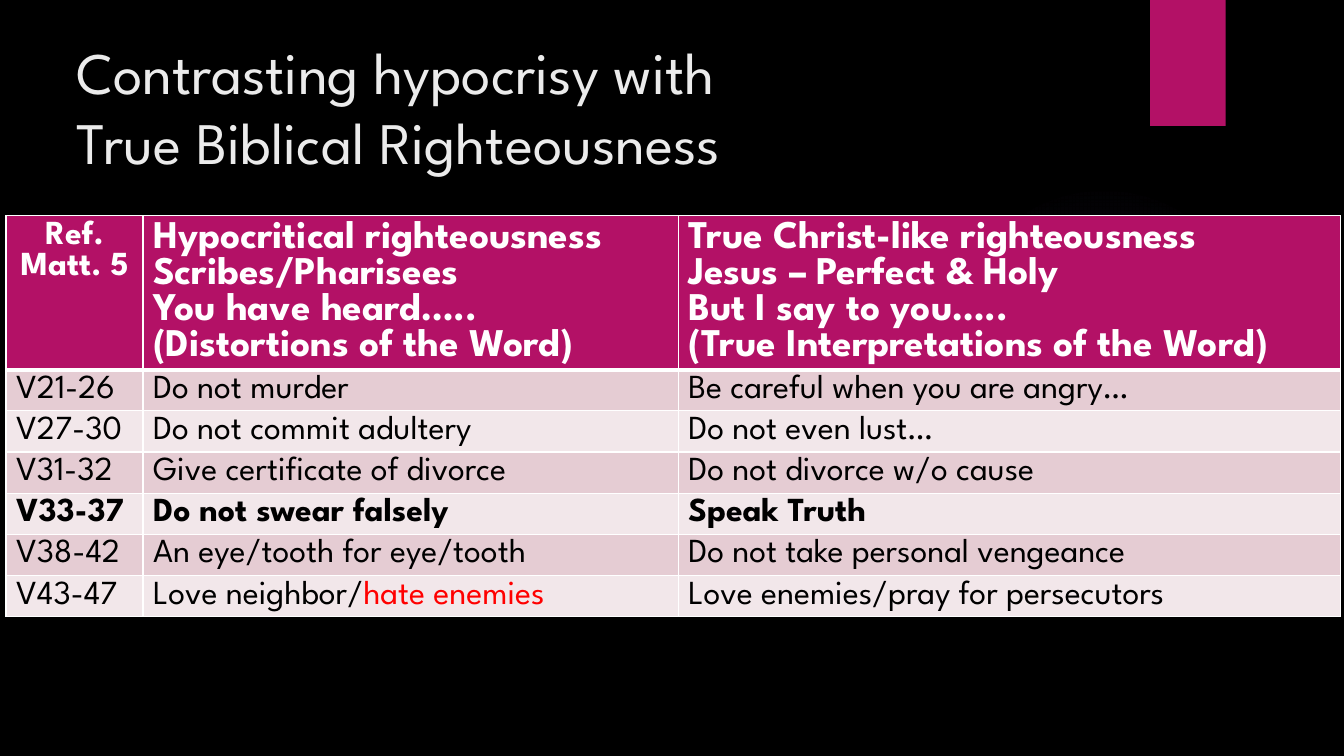
from dataclasses import dataclass

from lxml import etree
from pptx import Presentation
from pptx.dml.color import RGBColor
from pptx.enum.shapes import MSO_SHAPE
from pptx.enum.text import MSO_ANCHOR, MSO_AUTO_SIZE, PP_ALIGN
from pptx.oxml import parse_xml
from pptx.oxml.ns import qn
from pptx.shapes.autoshape import Shape
from pptx.slide import Slide
from pptx.table import _Cell
from pptx.text.text import _Run
from pptx.util import Pt

RECTANGLE, OVAL = MSO_SHAPE.RECTANGLE, MSO_SHAPE.OVAL
LEFT, CENTER = PP_ALIGN.LEFT, PP_ALIGN.CENTER
MIDDLE = MSO_ANCHOR.MIDDLE
NO_AUTOFIT = MSO_AUTO_SIZE.NONE
DRAWING_NAMESPACE = "http://schemas.openxmlformats.org/drawingml/2006/main"


@dataclass(frozen=True)
class Theme:
    font: str = "League Spartan"
    background: str = "000000"
    accent: str = "B31166"
    glow: str = "9B6BF2"
    title: str = "EBEBEB"
    light: str = "FFFFFF"
    dark: str = "000000"
    warning: str = "FF0000"
    bands: tuple[str, str] = ("E5CCD3", "F2E7EA")
    title_size: float = 42
    title_spacing: float = 50
    header_size: float = 28
    body_size: float = 24
    border: float = 1
    header_border: float = 3


@dataclass(frozen=True)
class Box:
    left: float
    top: float
    width: float
    height: float


@dataclass(frozen=True)
class Column:
    width: float
    heading: tuple[str, ...]
    heading_size: float
    heading_alignment: PP_ALIGN


@dataclass(frozen=True)
class Contrast:
    verses: str
    heard: str
    said: str
    bold: bool = False
    heard_warning: str = ""


THEME = Theme()
TITLE_BOX = Box(47.5, 20.9, 740.9, 110.2)
GLOW_BOX = Box(677.5, 131.8, 221.8, 221.8)
TAB_BOX = Box(821.5, 0, 54, 90)
TABLE_LEFT, TABLE_TOP = 4.3, 154.1
HEADER_HEIGHT, ROW_HEIGHT = 110, 29.4
TITLE = "Contrasting hypocrisy with\vTrue Biblical Righteousness"

COLUMNS = (
    Column(97.9, ("Ref.", "Matt. 5"), THEME.body_size, CENTER),
    Column(382.3, ("Hypocritical righteousness", "Scribes/Pharisees",
                   "You have heard…..", "(Distortions of the Word)"),
           THEME.header_size, LEFT),
    Column(473, ("True Christ-like righteousness", "Jesus – Perfect & Holy",
                 "But I say to you…..", "(True Interpretations of the Word)"),
           THEME.header_size, LEFT),
)
CONTRASTS = (
    Contrast("V21-26", "Do not murder", "Be careful when you are angry…"),
    Contrast("V27-30", "Do not commit adultery", "Do not even lust…"),
    Contrast("V31-32", "Give certificate of divorce", "Do not divorce w/o cause"),
    Contrast("V33-37", "Do not swear falsely", "Speak Truth", bold=True),
    Contrast("V38-42", "An eye/tooth for eye/tooth", "Do not take personal vengeance"),
    Contrast("V43-47", "Love neighbor/", "Love enemies/pray for persecutors",
             heard_warning="hate enemies"),
)


def format_run(run: _Run, size: float, color: str, bold: bool = False) -> None:
    values = {"name": THEME.font, "size": Pt(size), "bold": bold}
    for name, value in values.items():
        setattr(run.font, name, value)
    run.font.color.rgb = RGBColor.from_string(color)


def add_plain_shape(slide: Slide, kind: MSO_SHAPE, box: Box, color: str) -> Shape:
    shape = slide.shapes.add_shape(
        kind, Pt(box.left), Pt(box.top), Pt(box.width), Pt(box.height))
    shape.shadow.inherit = False
    shape.fill.solid()
    shape.fill.fore_color.rgb = RGBColor.from_string(color)
    shape.line.fill.background()
    return shape


def add_glow(slide: Slide) -> None:
    shape = add_plain_shape(slide, OVAL, GLOW_BOX, THEME.glow)
    stops = "".join(
        f'<a:gs pos="{position * 1000}"><a:srgbClr val="{THEME.glow}">'
        f'<a:alpha val="{opacity * 1000}"/></a:srgbClr></a:gs>'
        for position, opacity in ((0, 7), (36, 6), (69, 0)))
    gradient = parse_xml(
        f'<a:gradFill xmlns:a="{DRAWING_NAMESPACE}"><a:gsLst>{stops}</a:gsLst>'
        '<a:path path="circle"><a:fillToRect l="50000" t="50000" r="50000" b="50000"/>'
        '</a:path></a:gradFill>')
    properties = shape.element.spPr
    properties.replace(properties.find(qn("a:solidFill")), gradient)


def add_title(slide: Slide) -> None:
    title = slide.shapes.title
    for name in ("left", "top", "width", "height"):
        setattr(title, name, Pt(getattr(TITLE_BOX, name)))
    frame_values = {"word_wrap": True, "auto_size": NO_AUTOFIT, "vertical_anchor": MIDDLE}
    for name, value in frame_values.items():
        setattr(title.text_frame, name, value)
    paragraph = title.text_frame.paragraphs[0]
    paragraph.text = TITLE
    paragraph.alignment = LEFT
    paragraph.line_spacing = Pt(THEME.title_spacing)
    for run in paragraph.runs:
        format_run(run, THEME.title_size, THEME.title)


def style_cell(cell: _Cell, color: str, top: float, bottom: float) -> None:
    properties = cell._tc.get_or_add_tcPr()
    widths = {"lnL": THEME.border, "lnR": THEME.border, "lnT": top, "lnB": bottom}
    for side, width in widths.items():
        line = etree.SubElement(properties, qn(f"a:{side}"), w=str(Pt(width)))
        fill = etree.SubElement(line, qn("a:solidFill"))
        etree.SubElement(fill, qn("a:srgbClr"), val=THEME.light)
    cell.fill.solid()
    cell.fill.fore_color.rgb = RGBColor.from_string(color)


def fill_heading(cell: _Cell, column: Column) -> None:
    style_cell(cell, THEME.accent, THEME.border, THEME.header_border)
    cell.text = "\n".join(column.heading)
    for paragraph in cell.text_frame.paragraphs:
        paragraph.alignment = column.heading_alignment
        format_run(paragraph.runs[0], column.heading_size, THEME.light, bold=True)


def add_contrast_table(slide: Slide) -> None:
    width = sum(column.width for column in COLUMNS)
    height = HEADER_HEIGHT + ROW_HEIGHT * len(CONTRASTS)
    table = slide.shapes.add_table(
        len(CONTRASTS) + 1, len(COLUMNS),
        Pt(TABLE_LEFT), Pt(TABLE_TOP), Pt(width), Pt(height)).table

    # Header row
    table.rows[0].height = Pt(HEADER_HEIGHT)
    for index, column in enumerate(COLUMNS):
        table.columns[index].width = Pt(column.width)
        fill_heading(table.cell(0, index), column)

    # Banded rows
    for row, contrast in enumerate(CONTRASTS, start=1):
        table.rows[row].height = Pt(ROW_HEIGHT)
        top = THEME.header_border if row == 1 else THEME.border
        band = THEME.bands[(row - 1) % 2]
        for index, text in enumerate((contrast.verses, contrast.heard, contrast.said)):
            cell = table.cell(row, index)
            style_cell(cell, band, top, THEME.border)
            cell.text = text
            run = cell.text_frame.paragraphs[0].runs[0]
            format_run(run, THEME.body_size, THEME.dark, contrast.bold)
        if contrast.heard_warning:
            run = table.cell(row, 1).text_frame.paragraphs[0].add_run()
            run.text = contrast.heard_warning
            format_run(run, THEME.body_size, THEME.warning, contrast.bold)


def main() -> None:
    presentation = Presentation()
    presentation.slide_width, presentation.slide_height = Pt(960), Pt(540)
    slide = presentation.slides.add_slide(presentation.slide_layouts[5])
    slide.background.fill.solid()
    slide.background.fill.fore_color.rgb = RGBColor.from_string(THEME.background)
    add_glow(slide)
    add_plain_shape(slide, RECTANGLE, TAB_BOX, THEME.accent)
    add_title(slide)
    add_contrast_table(slide)
    presentation.save("out.pptx")


if __name__ == "__main__":
    main()
